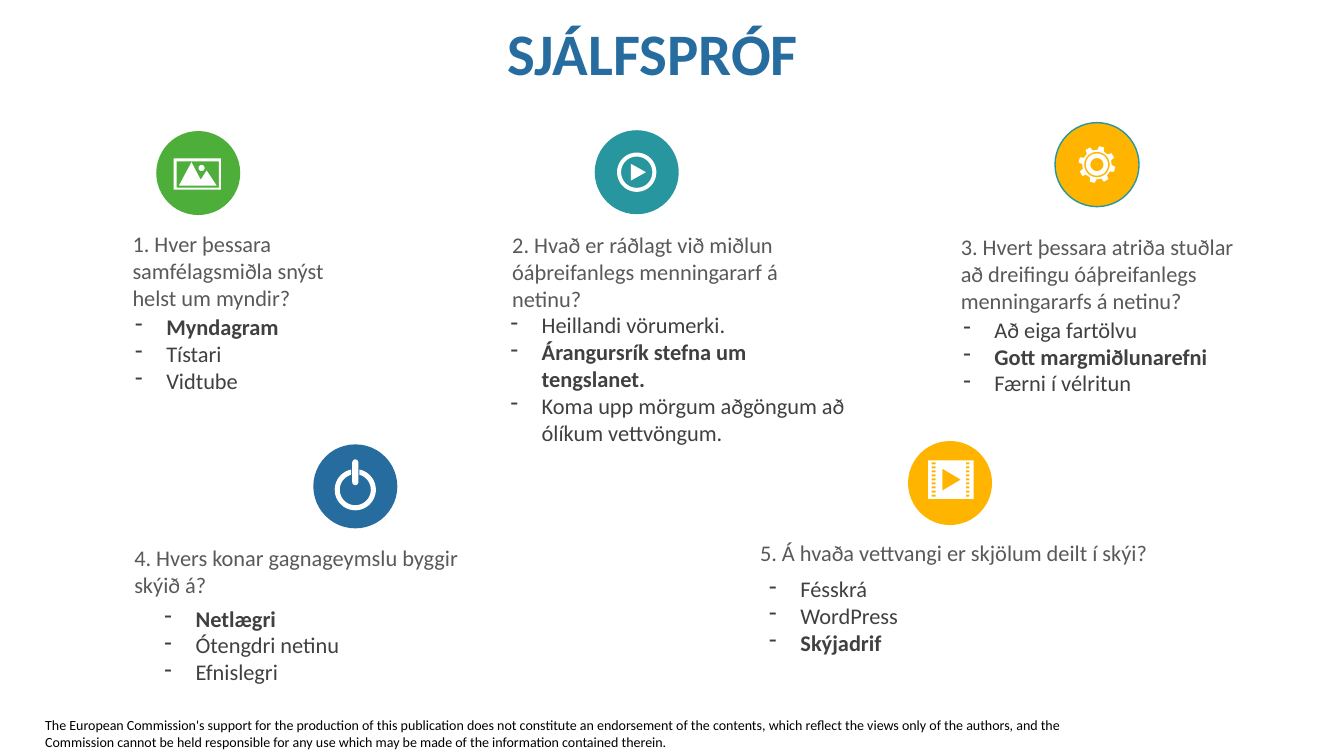
from dataclasses import dataclass
from math import cos, radians, sin

from lxml.etree import SubElement
from pptx import Presentation
from pptx.dml.color import RGBColor as Rgb
from pptx.enum.shapes import MSO_SHAPE as Kind
from pptx.enum.text import MSO_ANCHOR as Anchor
from pptx.oxml.ns import qn
from pptx.util import Inches, Pt


@dataclass(frozen=True)
class Theme:
    font: str = "Calibri"
    blue: str = "266C9F"
    teal: str = "27969F"
    green: str = "4EAE3A"
    gold: str = "FFB500"
    white: str = "FFFFFF"
    black: str = "000000"
    ask: str = "595959"
    reply: str = "404040"
    title: int = 42
    body: int = 16
    note: int = 10


# Grid of 160 columns by 90 rows
CELL = Inches(7.5) / 90
DISC = 10
HANG = Inches(0.31)


def grid(*cells):
    return [round(n * CELL) for n in cells]


# Outlines, in cells from the centre of a disc
def arc(x, y, r, start=0, end=360):
    steps = 40
    turns = [radians(start + (end - start) * i / steps) for i in range(steps + 1)]
    return [(x + r * cos(t), y + r * sin(t)) for t in turns]


def rect(x1, y1, x2, y2):
    return [(x1, y1), (x2, y1), (x2, y2), (x1, y2)]


def photo():
    hills = [(-0.8, -1.3), (0.3, 0.8), (1, -0.3), (2.2, 1.5), (-2.3, 1.5)]
    return [rect(-2.94, -1.74, 2.7, 1.98), rect(-2.58, -1.38, 2.46, 1.74),
            hills, arc(0.4, -0.6, 0.36)]


def play():
    return [arc(0, 0, 2.34), arc(0, 0, 1.86), [(-0.7, -1), (1.1, 0), (-0.7, 1)]]


def gear():
    teeth = []
    for tooth in range(8):
        mid = tooth * 45 - 75
        for r, turn in ((1.75, -13), (2.2, -8), (2.2, 8), (1.75, 13)):
            angle = radians(mid + turn)
            teeth.append((r * cos(angle), r * sin(angle)))
    return [teeth] + [arc(0, 0, r) for r in (1.52, 1.32, 0.78)]


def power():
    ring = arc(0, 0.4, 2.45, -78.7, 258.7) + arc(0, 0.4, 1.85, 255, -75)
    bar = arc(0, -2.84, 0.36, 180, 360) + arc(0, -0.5, 0.36, 0, 180)
    return [ring, bar]


def film():
    holes = [rect(x1, y, x2, y + 0.24)
             for x1, x2 in ((-2.2, -1.7), (1.9, 2.3))
             for y in (-2.46 + 0.48 * i for i in range(9))]
    return [rect(-2.6, -2.7, 2.8, 1.9), [(-0.9, -1.7), (1.3, -0.4), (-0.9, 0.9)]] + holes


class Page:
    def __init__(self, deck, theme):
        self.theme = theme
        self.slide = deck.slides.add_slide(deck.slide_layouts[6])

    def paint(self, shape, fill, line=None):
        shape.shadow.inherit = False
        shape.fill.solid()
        shape.fill.fore_color.rgb = Rgb.from_string(fill)
        if line:
            shape.line.color.rgb = Rgb.from_string(line)
            shape.line.width = Pt(1)
        else:
            shape.line.fill.background()

    def frame(self, box):
        frame = self.slide.shapes.add_textbox(*grid(*box)).text_frame
        frame.word_wrap = True
        return frame

    def run(self, para, words, size, color, bold=False):
        run = para.add_run()
        run.text = words
        font = run.font
        font.name, font.size, font.bold = self.theme.font, Pt(size), bold
        font.color.rgb = Rgb.from_string(color)

    def text(self, box, words, size, color, bold=False):
        frame = self.frame(box)
        self.run(frame.paragraphs[0], words, size, color, bold)
        return frame

    def title(self, box, words):
        frame = self.text(box, words, self.theme.title, self.theme.blue, True)
        frame.vertical_anchor = Anchor.MIDDLE
        frame.paragraphs[0].line_spacing = 0.9

    def dashes(self, box, items, right):
        frame = self.frame(box)
        for i, item in enumerate(items):
            para = frame.add_paragraph() if i else frame.paragraphs[0]
            props = para._p.get_or_add_pPr()
            props.set("marL", str(HANG))
            props.set("indent", str(-HANG))
            SubElement(props, qn("a:buChar")).set("char", "-")
            self.run(para, item, self.theme.body, self.theme.reply, i == right)

    def disc(self, x, y, fill, line=None):
        box = grid(x - DISC / 2, y - DISC / 2, DISC, DISC)
        self.paint(self.slide.shapes.add_shape(Kind.OVAL, *box), fill, line)

    def icon(self, x, y, loops):
        pen = None
        for loop in loops:
            first, *rest = [grid(x + dx, y + dy) for dx, dy in loop]
            if pen is None:
                pen = self.slide.shapes.build_freeform(*first)
            else:
                pen.move_to(*first)
            pen.add_line_segments(rest, close=True)
        self.paint(pen.convert_to_shape(), self.theme.white)


def main():
    deck = Presentation()
    deck.slide_width, deck.slide_height = grid(160, 90)
    theme = Theme()
    page = Page(deck, theme)

    # Title and footer
    page.title((59.2, 2, 91.2, 9.5), "SJÁLFSPRÓF")
    page.text((4.2, 84.7, 125.5, 5.3),
              "The European Commission's support for the production of this publication "
              "does not constitute an endorsement of the contents, which reflect the views "
              "only of the authors, and the Commission cannot be held responsible for any "
              "use which may be made of the information contained therein.",
              theme.note, theme.black)

    # Disc, icon, question box, question, answer box, answers, index of the right one
    quiz = [
        ((23.6, 20.6, theme.green), photo, (14.6, 26.8, 28.8, 3.6),
         "1. Hver þessara samfélagsmiðla snýst helst um myndir?",
         (14.9, 36.7, 28.8, 10.9), ("Myndagram", "Tístari", "Vidtube"), 0),
        ((75.8, 20.5, theme.teal), play, (59.8, 26.9, 35.5, 3.6),
         "2. Hvað er ráðlagt við miðlun óáþreifanlegs menningararf á netinu?",
         (59.6, 36.5, 42.2, 10.9),
         ("Heillandi vörumerki.", "Árangursrík stefna um tengslanet.",
          "Koma upp mörgum aðgöngum að ólíkum vettvöngum."), 1),
        ((130.6, 19.6, theme.gold, theme.teal), gear, (113.2, 27.2, 35.5, 9.5),
         "3. Hvert þessara atriða stuðlar að dreifingu óáþreifanlegs menningararfs á netinu?",
         (113.5, 37, 35, 10.9),
         ("Að eiga fartölvu", "Gott margmiðlunarefni", "Færni í vélritun"), 1),
        ((42.3, 57.9, theme.blue), power, (14.8, 64.2, 43.3, 4.3),
         "4. Hvers konar gagnageymslu byggir skýið á?",
         (18.4, 71.4, 28.8, 10.9), ("Netlægri", "Ótengdri netinu", "Efnislegri"), 0),
        ((113.1, 57.5, theme.gold), film, (89.3, 63.6, 52.3, 4.9),
         "5. Á hvaða vettvangi er skjölum deilt í skýi?",
         (90.4, 67.9, 28.8, 10.9), ("Fésskrá", "WordPress", "Skýjadrif"), 2),
    ]
    for disc, draw, top, ask, base, items, right in quiz:
        page.disc(*disc)
        page.icon(*disc[:2], draw())
        page.text(top, ask, theme.body, theme.ask)
        page.dashes(base, items, right)

    deck.save("out.pptx")


if __name__ == "__main__":
    main()
